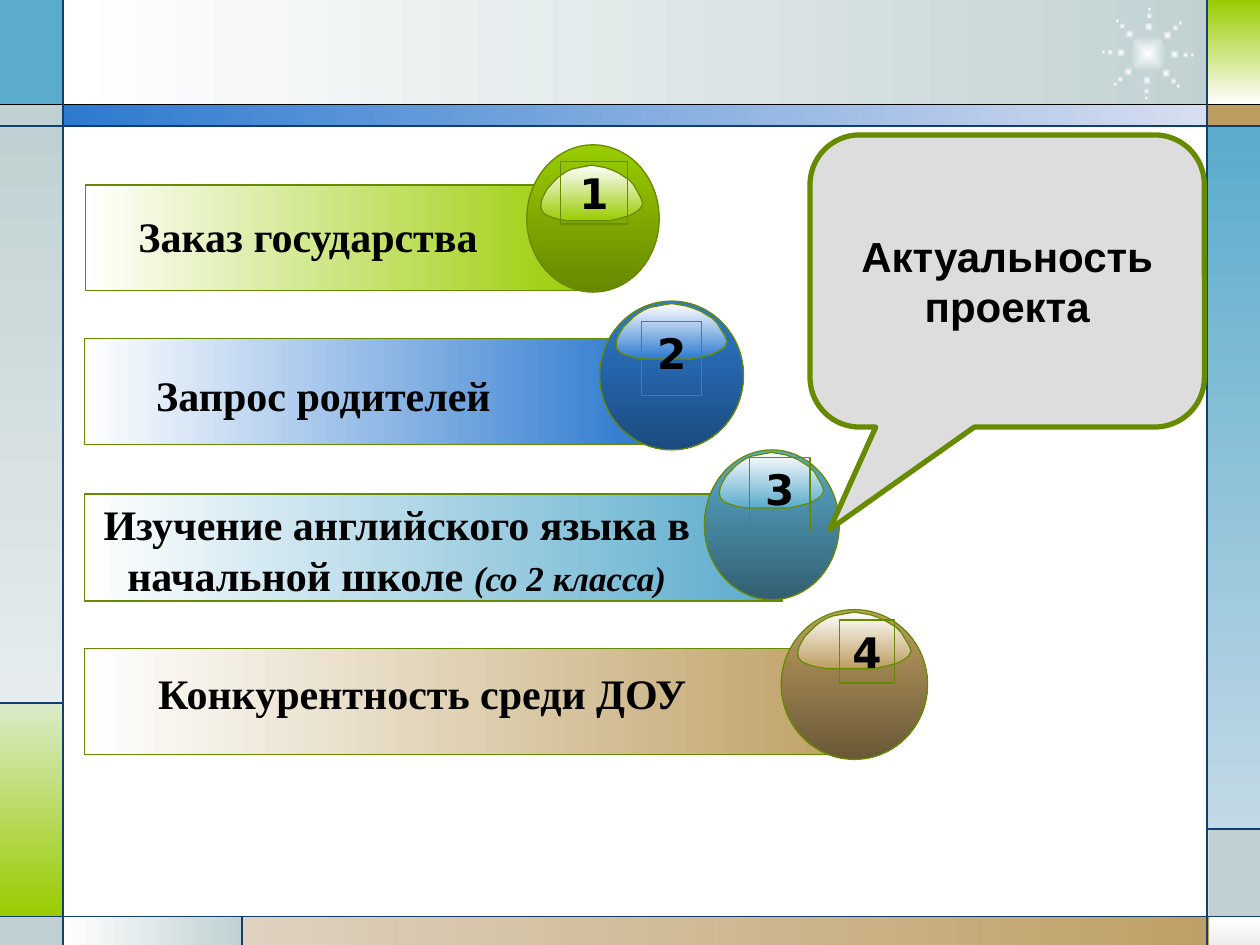
"""Build the project relevance slide: four numbered reasons beside a callout."""
import math
from dataclasses import dataclass

from lxml import etree
from pptx import Presentation
from pptx.dml.color import RGBColor
from pptx.enum import shapes, text
from pptx.oxml import ns
from pptx.util import Cm, Pt

WHITE = RGBColor(0xFF, 0xFF, 0xFF)
BLACK = RGBColor(0x00, 0x00, 0x00)
NAVY = RGBColor(0x11, 0x3F, 0x71)
GREY = RGBColor(0xC1, 0xD1, 0xD3)
SILVER = RGBColor(0xDD, 0xDD, 0xDD)
OLIVE = RGBColor(0x67, 0x8B, 0x00)
GREEN = RGBColor(0x99, 0xCC, 0x00)
BLUE = RGBColor(0x2D, 0x7A, 0xCF)
CYAN = RGBColor(0x5A, 0xAB, 0xCC)
TAN = RGBColor(0xBD, 0x9E, 0x61)

ACROSS, DOWN = 0, 270
KINDS = shapes.MSO_SHAPE
SERIF = {"name": "Times New Roman", "size": Pt(24), "bold": True}
NOTE = {"name": "Times New Roman", "size": Pt(20), "bold": True, "italic": True}
DIGIT = {"name": "DejaVu Sans", "size": Pt(24), "bold": True}
SANS = {"name": "Arial", "size": Pt(24), "bold": True}
CENTER, LEFT = text.PP_ALIGN.CENTER, text.PP_ALIGN.LEFT

Box = tuple[float, float, float, float]


@dataclass
class Tone:
    rgb: RGBColor
    effect: str = ""
    percent: float = 100


@dataclass
class Panel:
    box: Box
    start: Tone
    end: Tone | None = None
    angle: int = DOWN


@dataclass
class Reason:
    number: str
    color: RGBColor
    shade: float
    bar: Box
    orb: Box
    gloss: Box
    badge: Box
    badge_wrap: bool
    label: Box
    align: int
    runs: list[tuple[str, dict]]


PANELS = [
    Panel((1.27, 0, 23.55, 2.13), Tone(WHITE), Tone(GREY), ACROSS),
    Panel((0, 0, 1.27, 2.13), Tone(CYAN)),
    Panel((0, 2.11, 1.27, 0.43), Tone(GREY)),
    Panel((0, 2.54, 1.27, 11.63), Tone(GREY), Tone(GREY, "tint", 43)),
    Panel((0, 14.17, 1.27, 4.29), Tone(GREEN, "tint", 42), Tone(GREEN)),
    Panel((0, 18.47, 1.27, 0.58), Tone(GREY)),
    Panel((1.27, 18.47, 3.63, 0.58), Tone(WHITE), Tone(GREY), ACROSS),
    Panel((4.88, 18.47, 20.52, 0.58), Tone(TAN, "tint", 54), Tone(TAN), ACROSS),
    Panel((24.38, 18.47, 1.02, 0.58), Tone(WHITE), Tone(WHITE, "shade", 85)),
    Panel((24.36, 16.71, 1.04, 1.78), Tone(GREY)),
    Panel((24.33, 2.54, 1.07, 14.17), Tone(CYAN), Tone(CYAN, "tint", 51)),
    Panel((24.33, 2.11, 1.07, 0.43), Tone(TAN)),
    Panel((24.36, 0, 1.04, 2.11), Tone(GREEN), Tone(WHITE)),
    Panel((1.27, 2.11, 23.09, 0.43), Tone(BLUE), Tone(BLUE, "tint", 33), ACROSS),
]
RULES = [
    ((0, 2.11, 25.4, 2.11), BLACK),
    ((0, 2.54, 25.4, 2.54), NAVY),
    ((0, 18.47, 25.4, 18.47), NAVY),
    ((1.27, 0, 1.27, 19.05), NAVY),
    ((24.33, 0, 24.33, 19.05), NAVY),
    ((1.27, 14.17, 0, 14.17), NAVY),
    ((4.88, 18.47, 4.88, 19.05), NAVY),
    ((24.33, 16.71, 25.4, 16.71), NAVY),
]
REASONS = [
    Reason("4", TAN, 26.5, (1.7, 13.08, 15.95, 2.13), (15.75, 12.29, 2.95, 3.02),
           (16.08, 12.34, 2.29, 1.14), (16.92, 12.5, 1.12, 1.27), False,
           (1.91, 13.34, 13.21, 1.27), CENTER, [("Конкурентность среди ДОУ", SERIF)]),
    Reason("2", BLUE, 33, (1.7, 6.83, 11.33, 2.13), (12.09, 6.07, 2.9, 3),
           (12.42, 6.12, 2.24, 1.12), (12.93, 6.48, 1.22, 1.5), False,
           (2.9, 7.32, 7.59, 1.27), LEFT, [("Запрос родителей", SERIF)]),
    Reason("3", CYAN, 26.5, (1.7, 9.96, 14.07, 2.16), (14.2, 9.07, 2.72, 3.02),
           (14.5, 9.12, 2.11, 1.12), (15.11, 9.22, 1.22, 1.5), False,
           (1.7, 9.93, 12.6, 2.31), CENTER,
           [("Изучение английского языка в начальной школе ", SERIF), ("(со 2 класса)", NOTE)]),
    Reason("1", GREEN, 40, (1.73, 3.73, 10.29, 2.13), (10.62, 2.92, 2.67, 2.97),
           (10.9, 3.33, 2.06, 1.12), (11.3, 3.25, 1.35, 1.27), True,
           (2.11, 4.11, 8.2, 1.27), CENTER, [("Заказ государства", SERIF)]),
]
GLOSS = [
    (88, 26), (90, 31), (88, 35), (84, 38), (78, 41), (70, 43), (61, 45), (54, 45),
    (32, 45), (23, 45), (16, 44), (9, 42), (4, 40), (1, 37), (0, 33), (1, 28),
    (3, 24), (6, 19), (10, 15), (14, 11), (18, 8), (23, 5), (28, 3), (34, 2),
    (39, 1), (45, 0), (51, 1), (57, 2), (63, 4), (68, 6), (73, 9), (78, 12),
    (82, 16), (85, 21),
]


def paint(sp, start: Tone, end: Tone | None = None, angle: int = DOWN) -> None:
    sp.shadow.inherit = False
    if end is None:
        sp.fill.solid()
        sp.fill.fore_color.rgb = start.rgb
        return
    sp.fill.gradient()
    sp.fill.gradient_angle = angle
    for stop, tone in zip(sp.fill.gradient_stops, (start, end)):
        stop.color.rgb = tone.rgb
    colors = sp.element.spPr.findall(".//" + ns.qn("a:gs") + "/" + ns.qn("a:srgbClr"))
    for color, tone in zip(colors, (start, end)):
        if tone.effect:
            mod = etree.SubElement(color, ns.qn("a:" + tone.effect))
            mod.set("val", str(round(tone.percent * 1000)))


def outline(sp, color: RGBColor | None = OLIVE, width: float = 0.75) -> None:
    if color is None:
        sp.line.fill.background()
    else:
        sp.line.color.rgb = color
        sp.line.width = Pt(width)


def add_preset(s, kind: int, box: Box):
    return s.shapes.add_shape(kind, *map(Cm, box))


def write(sp, runs: list[tuple[str, dict]], align: int, anchor: int, **frame) -> None:
    tf = sp.text_frame
    for key, value in {"word_wrap": True, "vertical_anchor": anchor, **frame}.items():
        setattr(tf, key, value)
    p = tf.paragraphs[0]
    p.alignment = align
    for words, style in runs:
        r = p.add_run()
        r.text = words
        r.font.color.rgb = BLACK
        for key, value in style.items():
            setattr(r.font, key, value)


def draw_panel(s, panel: Panel) -> None:
    sp = add_preset(s, KINDS.RECTANGLE, panel.box)
    paint(sp, panel.start, panel.end, panel.angle)
    outline(sp, None)


def draw_rule(s, ends: Box, color: RGBColor) -> None:
    line = s.shapes.add_connector(shapes.MSO_CONNECTOR.STRAIGHT, *map(Cm, ends))
    outline(line, color)
    etree.SubElement(line.element.spPr, ns.qn("a:effectLst"))


def draw_spark(s, x: float, y: float, size: float) -> None:
    sp = add_preset(s, KINDS.OVAL, (x - size / 2, y - size / 2, size, size))
    paint(sp, Tone(WHITE), Tone(GREY))
    outline(sp, None)
    lin = sp.element.spPr.find(".//" + ns.qn("a:lin"))
    radial = etree.Element(ns.qn("a:path"), {"path": "shape"})
    etree.SubElement(radial, ns.qn("a:fillToRect"), dict.fromkeys("ltrb", "50000"))
    lin.getparent().replace(lin, radial)


def draw_star(s, x: float, y: float) -> None:
    draw_spark(s, x, y, 0.76)
    for arm in range(8):
        angle = math.radians(45 * arm + 2)
        for radius, size in ((0.76, 0.13), (0.9, 0.09), (0.54, 0.19)):
            draw_spark(s, x + radius * math.cos(angle), y + radius * math.sin(angle), size)


def draw_gloss(s, box: Box, color: RGBColor) -> None:
    left, top, width, height = box
    points = [(Cm(left + width * x / 90), Cm(top + height * y / 45)) for x, y in GLOSS]
    builder = s.shapes.build_freeform(*points[0])
    builder.add_line_segments(points[1:], close=True)
    sp = builder.convert_to_shape()
    paint(sp, Tone(WHITE), Tone(color))
    outline(sp)


def draw_reason(s, reason: Reason) -> None:
    bar = add_preset(s, KINDS.RECTANGLE, reason.bar)
    paint(bar, Tone(WHITE), Tone(reason.color), ACROSS)
    orb = add_preset(s, KINDS.OVAL, reason.orb)
    paint(orb, Tone(reason.color), Tone(reason.color, "shade", reason.shade))
    draw_gloss(s, reason.gloss, reason.color)
    badge = add_preset(s, KINDS.RECTANGLE, reason.badge)
    badge.shadow.inherit = False
    badge.fill.background()
    for sp in (bar, orb, badge):
        outline(sp)
    grow = {"auto_size": text.MSO_AUTO_SIZE.SHAPE_TO_FIT_TEXT}
    write(badge, [(reason.number, DIGIT)], CENTER, text.MSO_ANCHOR.TOP,
          **grow | {"word_wrap": reason.badge_wrap})
    label = s.shapes.add_textbox(*map(Cm, reason.label))
    write(label, reason.runs, reason.align, text.MSO_ANCHOR.TOP, **grow)


def draw_callout(s) -> None:
    sp = add_preset(s, KINDS.ROUNDED_RECTANGULAR_CALLOUT, (16.33, 2.72, 7.95, 5.89))
    for i, value in enumerate((-0.45, 0.85, 0.17)):
        sp.adjustments[i] = value
    paint(sp, Tone(SILVER))
    outline(sp, width=3)
    write(sp, [("Актуальность проекта", SANS)], CENTER, text.MSO_ANCHOR.MIDDLE)


def main() -> None:
    prs = Presentation()
    prs.slide_width, prs.slide_height = Cm(25.4), Cm(19.05)
    s = prs.slides.add_slide(prs.slide_layouts[6])
    for panel in PANELS:
        draw_panel(s, panel)
    draw_star(s, 23.14, 1.08)
    for ends, color in RULES:
        draw_rule(s, ends, color)
    for reason in REASONS:
        draw_reason(s, reason)
    draw_callout(s)
    prs.save("out.pptx")


if __name__ == "__main__":
    main()
